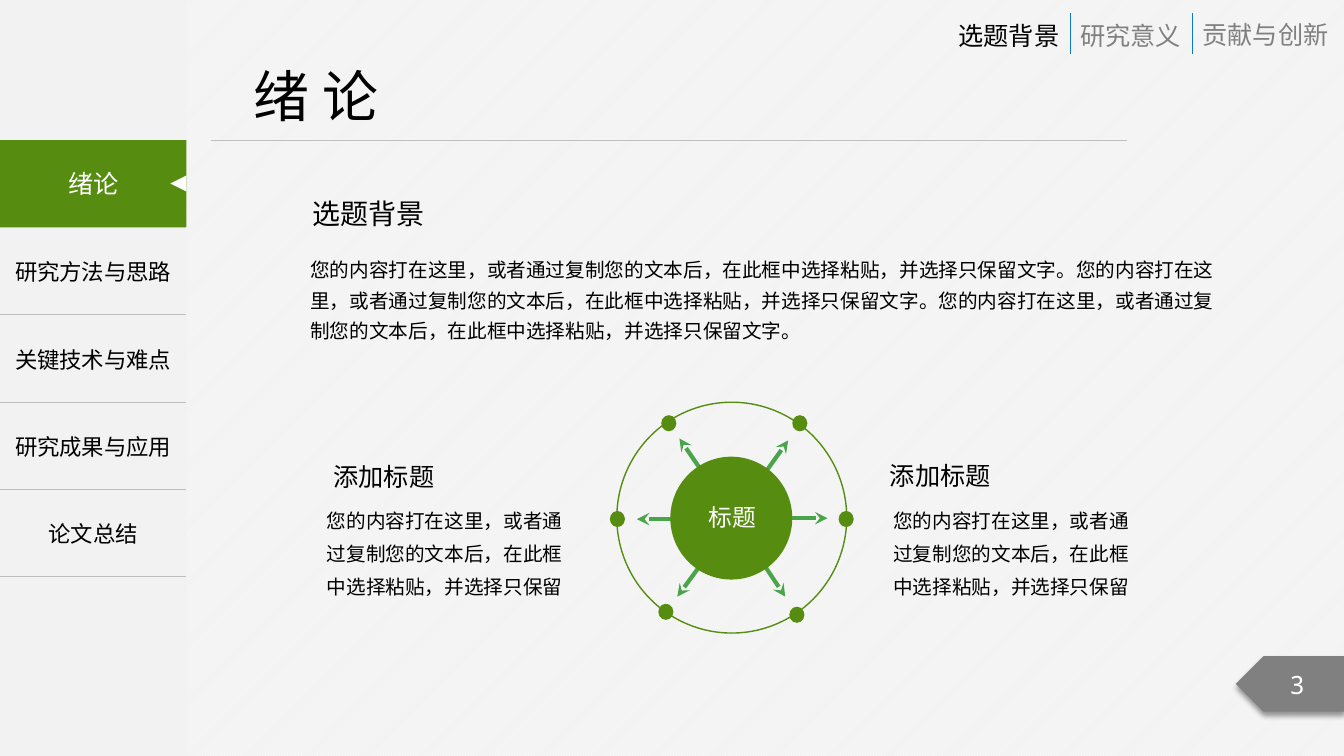
from typing import NamedTuple

from lxml import etree
from pptx import Presentation
from pptx.dml.color import RGBColor
from pptx.enum.dml import MSO_PATTERN
from pptx.enum.shapes import MSO_CONNECTOR, MSO_SHAPE
from pptx.enum.text import MSO_ANCHOR, MSO_AUTO_SIZE, PP_ALIGN
from pptx.oxml.ns import qn
from pptx.util import Pt

RECT, OVAL = MSO_SHAPE.RECTANGLE, MSO_SHAPE.OVAL
TRIANGLE, PENTAGON = MSO_SHAPE.ISOSCELES_TRIANGLE, MSO_SHAPE.PENTAGON
STRAIGHT = MSO_CONNECTOR.STRAIGHT
LEFT, CENTER, RIGHT = PP_ALIGN.LEFT, PP_ALIGN.CENTER, PP_ALIGN.RIGHT
TOP, MIDDLE = MSO_ANCHOR.TOP, MSO_ANCHOR.MIDDLE
GROW = MSO_AUTO_SIZE.SHAPE_TO_FIT_TEXT
DIAGONAL = MSO_PATTERN.LIGHT_UPWARD_DIAGONAL

BLACK = RGBColor(0x00, 0x00, 0x00)
WHITE = RGBColor(0xFF, 0xFF, 0xFF)
PALE = RGBColor(0xF2, 0xF2, 0xF2)
RULE = RGBColor(0xBF, 0xBF, 0xBF)
GRAY = RGBColor(0x80, 0x80, 0x80)
GREEN = RGBColor(0x56, 0x8D, 0x11)
ARROW = RGBColor(0x4A, 0xA4, 0x4A)
BLUE = RGBColor(0x0D, 0x79, 0xCA)

SANS, MONO = "Noto Sans CJK SC", "Noto Sans Mono"
SIDEBAR_W, MENU_TOP, ROW_H = 133.2, 100.1, 62.4
DOT_W, DOT_H = 10.8, 11.5
MENU = ("", "研究方法与思路", "关键技术与难点", "研究成果与应用", "论文总结")
SENTENCE = "您的内容打在这里，或者通过复制您的文本后，在此框中选择粘贴，并选择只保留"


class Label(NamedTuple):
    text: str
    x: float
    y: float
    w: float
    h: float
    size: float
    color: RGBColor = BLACK
    wrap: bool = False
    align: PP_ALIGN = LEFT
    spacing: float | Pt | None = None


class Line(NamedTuple):
    x1: float
    y1: float
    x2: float
    y2: float
    color: RGBColor
    width: float
    arrow: bool = False


TABS_AND_HEADING = (
    Label("选题背景", 677.5, 10.8, 87.1, 28.8, 18),
    Label("研究意义", 764.6, 10.8, 87.1, 28.8, 18, GRAY),
    Label("贡献与创新", 851.8, 10.1, 105.1, 28.8, 18, GRAY),
    Label((SENTENCE + "文字。") * 3, 214.6, 175.7, 666, 95.8, 14, wrap=True, spacing=1.3),
    Label("选题背景", 216, 136.8, 95, 31.7, 20),
)
CAPTIONS = (
    Label("标题", 499, 355.7, 54, 28.1, 17, WHITE),
    Label("添加标题", 628.6, 325.4, 87.1, 28.8, 18),
    Label(SENTENCE, 630.7, 352.8, 182.9, 77, 14, wrap=True, align=RIGHT, spacing=Pt(23.7)),
    Label("添加标题", 231.1, 326.2, 87.1, 28.8, 18),
    Label(SENTENCE, 226.1, 352.8, 182.9, 79.9, 14, wrap=True, align=RIGHT, spacing=Pt(23.7)),
)
RULES = (
    Line(150.5, MENU_TOP, 805, MENU_TOP, RULE, 0.5),
    Line(764.6, 9.4, 764.6, 38.9, BLUE, 0.5),
    Line(851.8, 9.4, 851.8, 38.9, BLUE, 0.5),
)
SPOKES = tuple(
    Line(*ends, ARROW, 3, True)
    for ends in (
        (523.4, 370.1, 563, 314.6),
        (522, 370.1, 591.1, 370.1),
        (523.4, 368.6, 485.3, 313.2),
        (522, 370.8, 455, 370.8),
        (523.4, 372.2, 483.8, 426.2),
        (524.9, 372.2, 560.9, 426.2),
    )
)
DOTS = (
    (565.9, 296.6), (472.3, 296.6), (435.6, 365),
    (599, 365), (563.8, 433.4), (470.2, 431.3),
)


def write(tf, text: str, *, size: float, color: RGBColor = BLACK, font: str = SANS,
          align: PP_ALIGN = LEFT, anchor: MSO_ANCHOR = TOP, wrap: bool = True,
          spacing: float | Pt | None = None) -> None:
    tf.word_wrap = wrap
    tf.vertical_anchor = anchor
    p = tf.paragraphs[0]
    p.alignment = align
    p.line_spacing = spacing
    r = p.add_run()
    r.text = text
    r.font.size = Pt(size)
    r.font.name = font
    r.font.color.rgb = color
    etree.SubElement(r.font._element, qn("a:ea"), typeface=font)


def add_label(s, label: Label) -> None:
    sp = s.shapes.add_textbox(Pt(label.x), Pt(label.y), Pt(label.w), Pt(label.h))
    write(sp.text_frame, label.text, size=label.size, color=label.color,
          align=label.align, wrap=label.wrap, spacing=label.spacing)
    sp.text_frame.auto_size = GROW


def add_shape(s, kind: MSO_SHAPE, x: float, y: float, w: float, h: float,
              fill: RGBColor | None = None, line: RGBColor | None = None):
    sp = s.shapes.add_shape(kind, Pt(x), Pt(y), Pt(w), Pt(h))
    sp.shadow.inherit = False
    if fill is None:
        sp.fill.background()
    else:
        sp.fill.solid()
        sp.fill.fore_color.rgb = fill
    if line is None:
        sp.line.fill.background()
    else:
        sp.line.color.rgb = line
        sp.line.width = Pt(1)
    return sp


def add_line(s, line: Line) -> None:
    cx = s.shapes.add_connector(STRAIGHT, Pt(line.x1), Pt(line.y1), Pt(line.x2), Pt(line.y2))
    cx.line.color.rgb = line.color
    cx.line.width = Pt(line.width)
    if line.arrow:
        etree.SubElement(cx.line._get_or_add_ln(), qn("a:tailEnd"), type="stealth")
    etree.SubElement(cx._element.spPr, qn("a:effectLst"))


def set_borders(cell) -> None:
    tcPr = cell._tc.get_or_add_tcPr()
    for i, side in enumerate(("lnL", "lnR", "lnT", "lnB")):
        ln = etree.Element(qn(f"a:{side}"), w=str(Pt(1)))
        if side in ("lnT", "lnB"):
            fill = etree.SubElement(ln, qn("a:solidFill"))
            etree.SubElement(fill, qn("a:srgbClr"), val=str(RULE))
        else:
            etree.SubElement(ln, qn("a:noFill"))
        tcPr.insert(i, ln)


def add_menu(s) -> None:
    add_shape(s, RECT, 0, 0, SIDEBAR_W, 540, PALE)
    table = s.shapes.add_table(len(MENU), 1, 0, Pt(MENU_TOP), Pt(SIDEBAR_W),
                               Pt(ROW_H * len(MENU))).table
    table.first_row = table.horz_banding = False
    for i, text in enumerate(MENU):
        cell = table.cell(i, 0)
        cell.fill.background()
        set_borders(cell)
        cell.vertical_anchor = MIDDLE
        if text:
            write(cell.text_frame, text, size=16, align=CENTER, anchor=MIDDLE)
    sp = add_shape(s, RECT, 0, MENU_TOP, SIDEBAR_W, 62, GREEN)
    write(sp.text_frame, "绪论", size=18, color=WHITE, align=CENTER, anchor=MIDDLE)
    add_shape(s, TRIANGLE, 121.7, 125.3, 11.5, 11.5, WHITE).rotation = 270


def add_page_tag(s) -> None:
    sp = add_shape(s, PENTAGON, 882.7, 468.7, 77.8, 39.6, GRAY)
    write(sp.text_frame, "3", size=18, color=WHITE, font=MONO, align=CENTER, anchor=MIDDLE)
    spPr = sp._element.spPr
    spPr.find(qn("a:xfrm")).set("flipH", "1")
    shadow = etree.SubElement(spPr.find(qn("a:effectLst")), qn("a:outerShdw"),
                              blurRad=str(Pt(4)), dist=str(Pt(3)), dir="5400000",
                              algn="t", rotWithShape="0")
    color = etree.SubElement(shadow, qn("a:srgbClr"), val=str(BLACK))
    etree.SubElement(color, qn("a:alpha"), val="40000")


def main() -> None:
    prs = Presentation()
    prs.slide_width, prs.slide_height = Pt(960), Pt(540)
    s = prs.slides.add_slide(prs.slide_layouts[5])
    bg = s.background.fill
    bg.patterned()
    bg.pattern = DIAGONAL
    bg.fore_color.rgb, bg.back_color.rgb = WHITE, PALE

    title = s.shapes.title
    title.left, title.top, title.width, title.height = Pt(174.2), Pt(40.3), Pt(115.2), Pt(55.4)
    write(title.text_frame, "绪 论", size=40, wrap=False)
    title.text_frame.auto_size = GROW

    add_menu(s)
    add_page_tag(s)
    for line in RULES:
        add_line(s, line)
    for label in TABS_AND_HEADING:
        add_label(s, label)
    add_shape(s, OVAL, 440.6, 287.3, 164.2, 164.9, line=GREEN)
    for x, y in DOTS:
        add_shape(s, OVAL, x, y, DOT_W, DOT_H, GREEN)
    for spoke in SPOKES:
        add_line(s, spoke)
    add_shape(s, OVAL, 478.8, 326.2, 87.1, 87.8, GREEN)
    for label in CAPTIONS:
        add_label(s, label)
    prs.save("out.pptx")


if __name__ == "__main__":
    main()
